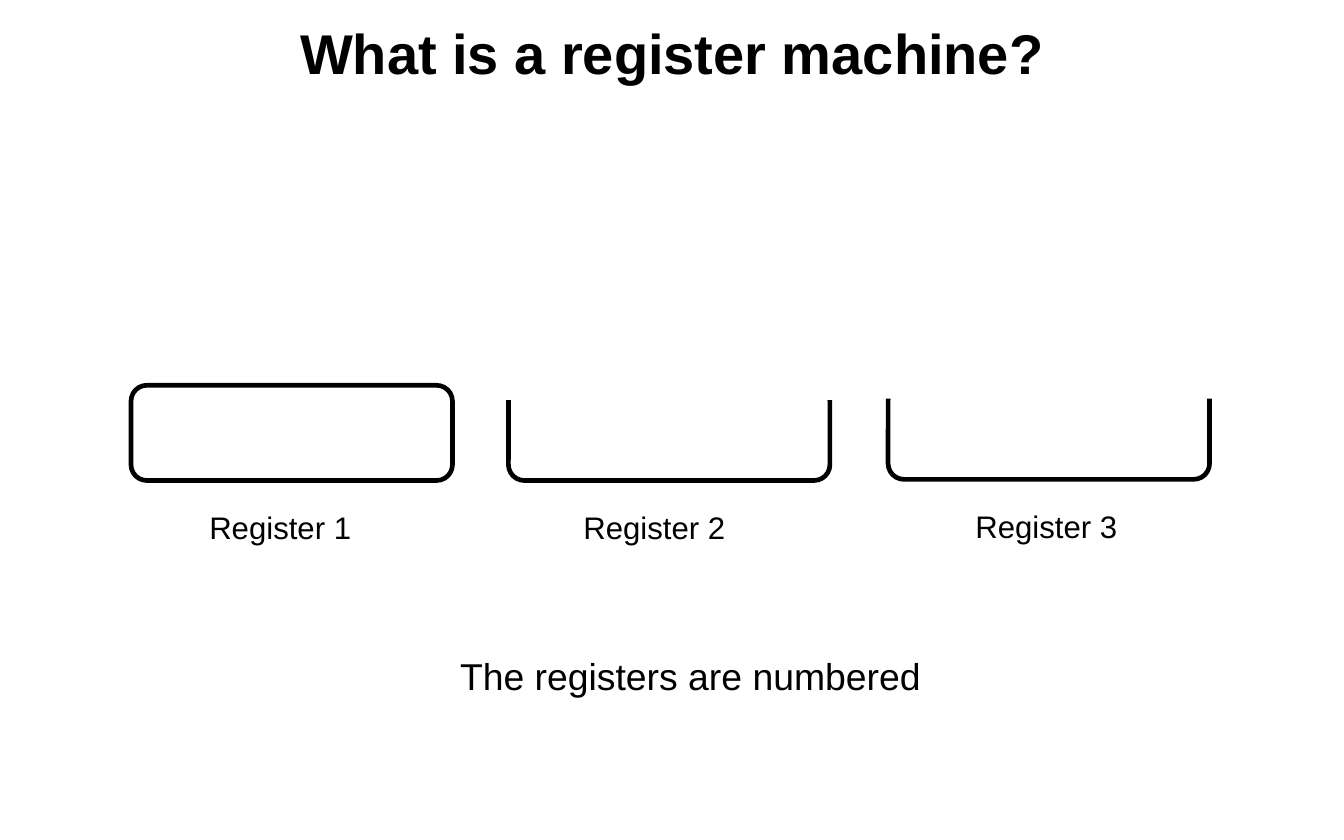
from collections import namedtuple

from pptx import Presentation
from pptx.dml.color import RGBColor
from pptx.enum.shapes import MSO_SHAPE
from pptx.enum.text import MSO_ANCHOR, MSO_AUTO_SIZE, PP_ALIGN
from pptx.util import Inches, Pt

COLORS = {"ink": "000000", "paper": "FFFFFF"}
FONT = "Arial"
COLUMNS, ROWS = 12, 7.5
SLIDE_WIDTH, SLIDE_HEIGHT = Inches(12), Inches(7.5)

Box = namedtuple("Box", "left top width height")


def place(box):
    """Turn a box in grid columns and rows into slide lengths."""
    column, row = SLIDE_WIDTH / COLUMNS, SLIDE_HEIGHT / ROWS
    return (round(box.left * column), round(box.top * row),
            round(box.width * column), round(box.height * row))


def add_run(paragraph, text, size, bold=False):
    """Add one run in the slide's font and ink colour."""
    run = paragraph.add_run()
    run.text = text
    run.font.name = FONT
    run.font.size = Pt(size)
    run.font.bold = bold
    run.font.color.rgb = RGBColor.from_string(COLORS["ink"])


def add_title(slide, box, text):
    """Move and format the title placeholder."""
    title = slide.shapes.title
    title.left, title.top, title.width, title.height = place(box)
    frame = title.text_frame
    frame.auto_size = MSO_AUTO_SIZE.NONE
    frame.vertical_anchor = MSO_ANCHOR.MIDDLE
    paragraph = frame.paragraphs[0]
    paragraph.alignment = PP_ALIGN.CENTER
    add_run(paragraph, text, 36, bold=True)


def add_caption(slide, box, text, size):
    """Add a single unwrapped line of text."""
    frame = slide.shapes.add_textbox(*place(box)).text_frame
    frame.word_wrap = False
    frame.auto_size = MSO_AUTO_SIZE.SHAPE_TO_FIT_TEXT
    paragraph = frame.paragraphs[0]
    paragraph.alignment = PP_ALIGN.LEFT
    add_run(paragraph, text, size)


def add_register(slide, box, is_open):
    """Draw a register, with a cover hiding the top edge if it is open."""
    group = slide.shapes.add_group_shape()
    body = group.shapes.add_shape(MSO_SHAPE.ROUNDED_RECTANGLE, *place(box))
    body.shadow.inherit = False
    body.fill.background()
    body.line.color.rgb = RGBColor.from_string(COLORS["ink"])
    body.line.width = Pt(3)
    if is_open:
        cover_box = Box(box.left - 0.06, box.top - 0.19, box.width + 0.11, 0.32)
        cover = group.shapes.add_shape(MSO_SHAPE.RECTANGLE, *place(cover_box))
        cover.shadow.inherit = False
        cover.fill.solid()
        cover.fill.fore_color.rgb = RGBColor.from_string(COLORS["paper"])
        cover.line.fill.background()


def add_registers(slide, box):
    """Place the numbered registers and their labels across the box."""
    registers = [
        (0, 0.01, 0.6, False),
        (3.37, 0.01, 0.57, True),
        (6.76, 0, 0.68, True),
    ]
    for number, (left, top, indent, is_open) in enumerate(registers, start=1):
        body = Box(box.left + left, box.top + top, 2.87, box.height)
        add_register(slide, body, is_open)
        label = Box(body.left + indent, body.top + 1.05, 1.48, 0.44)
        add_caption(slide, label, f"Register {number}", 20)


def main():
    """Build and save the slide."""
    presentation = Presentation()
    presentation.slide_width = SLIDE_WIDTH
    presentation.slide_height = SLIDE_HEIGHT
    slide = presentation.slides.add_slide(presentation.slide_layouts[5])
    slide.background.fill.solid()
    slide.background.fill.fore_color.rgb = RGBColor.from_string(COLORS["paper"])
    add_title(slide, Box(1, 0.09, 10, 0.75), "What is a register machine?")
    add_registers(slide, Box(1.17, 3.43, 9.63, 0.85))
    add_caption(slide, Box(4.01, 5.78, 4.36, 0.51), "The registers are numbered", 24)
    presentation.save("out.pptx")


if __name__ == "__main__":
    main()
